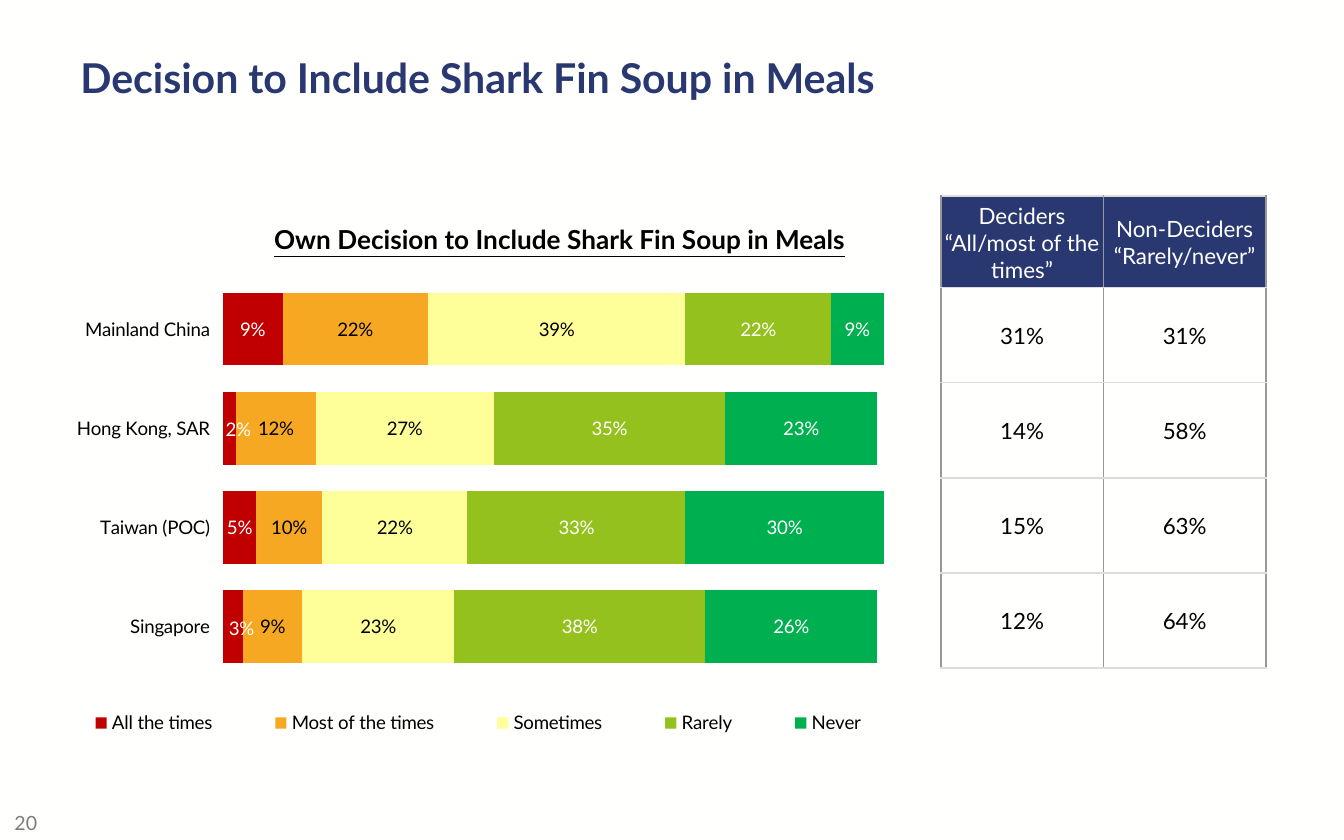
from lxml import etree
from pptx import Presentation
from pptx.chart.data import CategoryChartData
from pptx.dml.color import RGBColor
from pptx.enum.chart import XL_CHART_TYPE, XL_LABEL_POSITION, XL_LEGEND_POSITION
from pptx.enum.text import MSO_ANCHOR, PP_ALIGN
from pptx.oxml import parse_xml
from pptx.oxml.ns import nsdecls, qn
from pptx.util import Inches, Pt

STACKED = XL_CHART_TYPE.BAR_STACKED
CENTER_LABEL = XL_LABEL_POSITION.CENTER
BOTTOM = XL_LEGEND_POSITION.BOTTOM
MIDDLE = MSO_ANCHOR.MIDDLE
LEFT, CENTER = PP_ALIGN.LEFT, PP_ALIGN.CENTER

# Content
TITLE = "Decision to Include Shark Fin Soup in Meals"
CHART_TITLE = "Own Decision to Include Shark Fin Soup in Meals"
PAGE_NUMBER = "20"
MARKETS = ["Mainland China", "Hong Kong, SAR", "Taiwan (POC)", "Singapore"]
# answer, shares by market, bar colour, label colour
ANSWERS = [
    ("All the times", (0.09, 0.02, 0.05, 0.03), "C00000", "FFFFFE"),
    ("Most of the times", (0.22, 0.12, 0.10, 0.09), "F7A823", "000000"),
    ("Sometimes", (0.39, 0.27, 0.22, 0.23), "FFFF99", "000000"),
    ("Rarely", (0.22, 0.35, 0.33, 0.38), "95C11F", "FFFFFE"),
    ("Never", (0.09, 0.23, 0.30, 0.26), "00B050", "FFFFFE"),
]
NARROW_MARKETS = (1, 3)  # bars too thin to centre their first label
DECIDERS = [
    ("Deciders\n“All/most of the times”", "Non-Deciders “Rarely/never”"),
    ("31%", "31%"),
    ("14%", "58%"),
    ("15%", "63%"),
    ("12%", "64%"),
]

THEME = {
    "font": "Lato",
    "paper": "FFFFFE", "navy": "293870", "ink": "000000", "grey": "7D7D7D",
    "side_rule": "989898", "row_rule": "DCDCDC",
    "title": 22, "chart_title": 14, "table": 12, "chart": 10, "page": 10.5,
}

# Layout in inches
SLIDE = (10, 6.25)
TITLE_BOX = (0.5, 0.05, 9, 1.04)
CHART_TITLE_BOX = (1.83, 1.61, 4.67, 0.34)
PAGE_BOX = (0.01, 5.98, 0.47, 0.28)
CHART_BOX = (-0.75, 2.04, 7.98, 4.31)
TABLE_BOX = (7, 1.46, 2.42, 3.51)
HEADER_HEIGHT = 0.68


def color(name):
    return RGBColor.from_string(THEME.get(name, name))


def style(font, size, ink, bold=False, underline=False):
    font.name, font.size = THEME["font"], Pt(THEME[size])
    font.color.rgb = color(ink)
    font.bold, font.underline = bold, underline


def inches(box):
    return [Inches(length) for length in box]


def add_text(slide, box, text, size, ink, align=LEFT, **look):
    frame = slide.shapes.add_textbox(*inches(box)).text_frame
    frame.word_wrap = True
    frame.vertical_anchor = MIDDLE
    paragraph = frame.paragraphs[0]
    paragraph.text, paragraph.alignment = text, align
    style(paragraph.font, size, ink, **look)


def set_layout(parent, index, **settings):
    """Give a chart part a manual layout, in shares of the chart."""
    for old in parent.findall(qn("c:layout")):
        parent.remove(old)
    layout = parse_xml(f"<c:layout {nsdecls('c')}><c:manualLayout/></c:layout>")
    for tag, value in settings.items():
        etree.SubElement(layout[0], qn(f"c:{tag}")).set("val", str(value))
    parent.insert(index, layout)


def add_answer_chart(slide):
    data = CategoryChartData(number_format="0%")
    data.categories = MARKETS
    for answer, shares, _, _ in ANSWERS:
        data.add_series(answer, shares)
    chart = slide.shapes.add_chart(STACKED, *inches(CHART_BOX), data).chart
    chart.has_title = False
    style(chart.font, "chart", "ink")

    # Bars and their labels
    plot = chart.plots[0]
    plot.gap_width, plot.overlap, plot.vary_by_categories = 36, 100, False
    for series, (_, _, fill, ink) in zip(plot.series, ANSWERS):
        series.format.fill.solid()
        series.format.fill.fore_color.rgb = color(fill)
        labels = series.data_labels
        labels.show_value, labels.position = True, CENTER_LABEL
        labels.number_format, labels.number_format_is_linked = "0%", False
        style(labels.font, "chart", ink)

    # Move the labels of the thinnest bars to the right
    first = plot.series[0]
    for market in NARROW_MARKETS:
        label = first.points[market].data_label
        style(label.font, "chart", ANSWERS[0][3])
        label.position = CENTER_LABEL
    for label in first.data_labels._element.findall(qn("c:dLbl")):
        set_layout(label, 1, x=0.008, y=0.003)

    # Axes
    markets, shares = chart.category_axis, chart.value_axis
    markets.reverse_order = True
    markets.format.line.fill.background()
    shares.minimum_scale, shares.maximum_scale = 0, 1
    shares.has_major_gridlines = shares.visible = False

    # Legend and plot area
    chart.has_legend = True
    chart.legend.position, chart.legend.include_in_layout = BOTTOM, False
    style(chart.legend.font, "chart", "ink")
    set_layout(chart.legend._element, 1, xMode="edge", yMode="edge",
               x=0.13, y=0.74, w=0.82, h=0.07)
    set_layout(plot._element.getparent(), 0, layoutTarget="inner", xMode="edge",
               yMode="edge", x=0.302, y=0.009, w=0.616, h=0.685)


def add_borders(cell):
    sides = {"lnL": "side_rule", "lnR": "side_rule", "lnT": "row_rule", "lnB": "row_rule"}
    for index, (tag, rule) in enumerate(sides.items()):
        cell._tc.get_or_add_tcPr().insert(index, parse_xml(
            f'<a:{tag} {nsdecls("a")} w="{Pt(1)}"><a:solidFill>'
            f'<a:srgbClr val="{THEME[rule]}"/></a:solidFill></a:{tag}>'))


def add_decider_table(slide):
    rows, columns = len(DECIDERS), len(DECIDERS[0])
    width, height = TABLE_BOX[2:]
    table = slide.shapes.add_table(rows, columns, *inches(TABLE_BOX)).table
    for column in table.columns:
        column.width = Inches(width / columns)
    for index, row in enumerate(table.rows):
        body_height = (height - HEADER_HEIGHT) / (rows - 1)
        row.height = Inches(body_height if index else HEADER_HEIGHT)
        for cell, text in zip(row.cells, DECIDERS[index]):
            cell.text, cell.vertical_anchor = text, MIDDLE
            cell.margin_left = cell.margin_right = cell.margin_top = Inches(0.01)
            cell.margin_bottom = 0
            if index:
                cell.fill.background()
            else:
                cell.fill.solid()
                cell.fill.fore_color.rgb = color("navy")
            for paragraph in cell.text_frame.paragraphs:
                paragraph.alignment = CENTER
                style(paragraph.font, "table", "ink" if index else "paper")
            add_borders(cell)


def main():
    deck = Presentation()
    deck.slide_width, deck.slide_height = inches(SLIDE)
    slide = deck.slides.add_slide(deck.slide_layouts[6])
    slide.background.fill.solid()
    slide.background.fill.fore_color.rgb = color("paper")

    add_text(slide, PAGE_BOX, PAGE_NUMBER, "page", "grey")
    add_text(slide, TITLE_BOX, TITLE, "title", "navy", bold=True)
    add_answer_chart(slide)
    add_decider_table(slide)
    add_text(slide, CHART_TITLE_BOX, CHART_TITLE, "chart_title", "ink", CENTER,
             bold=True, underline=True)
    deck.save("out.pptx")


if __name__ == "__main__":
    main()
